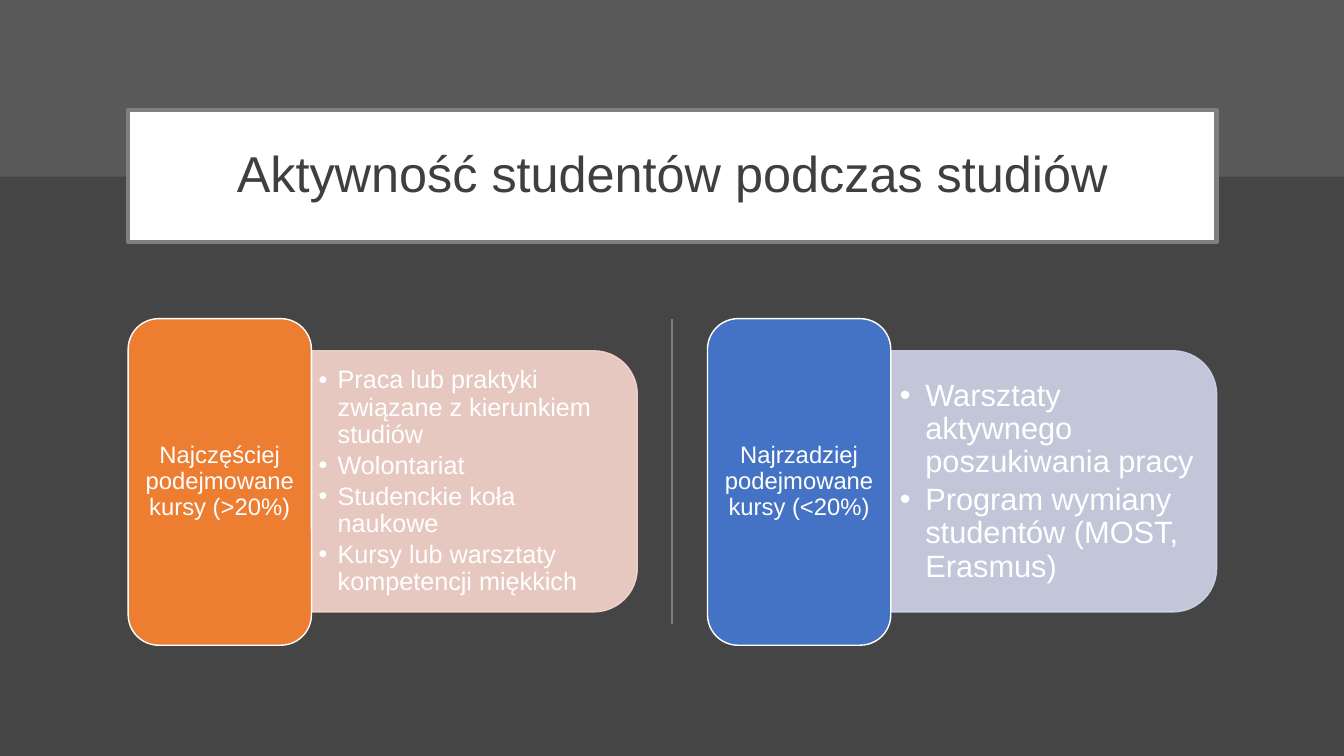
"""Build a slide comparing the most and least common student activities."""
import pptx
import pptx.dml.color
import pptx.enum.shapes
import pptx.enum.text
import pptx.oxml
import pptx.oxml.ns
import pptx.util
from pptx.util import Cm, Pt

RGBColor = pptx.dml.color.RGBColor
MSO_SHAPE = pptx.enum.shapes.MSO_SHAPE
PP_ALIGN = pptx.enum.text.PP_ALIGN

BACKGROUND = RGBColor(0x45, 0x45, 0x45)
BAND = RGBColor(0x59, 0x59, 0x59)
GRAY = RGBColor(0x7F, 0x7F, 0x7F)
TITLE_TEXT = RGBColor(0x3F, 0x3F, 0x3F)
WHITE = RGBColor(0xFF, 0xFF, 0xFF)
ORANGE = RGBColor(0xED, 0x7D, 0x31)
BLUE = RGBColor(0x44, 0x72, 0xC4)
PALE_ORANGE = RGBColor(0xF8, 0xD7, 0xCE)
PALE_BLUE = RGBColor(0xCF, 0xD5, 0xEA)

GROUP_TOP = Cm(8.03)
LABEL_WIDTH = Cm(4.62)
COLUMNS = [
    (Cm(3.23), ORANGE, PALE_ORANGE, "Najczęściej podejmowane kursy (>20%)", 18, Cm(0.48), Cm(0.18),
     ["Praca lub praktyki związane z kierunkiem studiów", "Wolontariat",
      "Studenckie koła naukowe", "Kursy lub warsztaty kompetencji miękkich"]),
    (Cm(17.83), BLUE, PALE_BLUE, "Najrzadziej podejmowane kursy (<20%)", 22, Cm(0.64), Cm(0.23),
     ["Warsztaty aktywnego poszukiwania pracy",
      "Program wymiany studentów (MOST, Erasmus)"]),
]


def style_shape(shape, fill, line=None, width=1):
    shape.shadow.inherit = False
    shape.fill.solid()
    shape.fill.fore_color.rgb = fill
    if line is None:
        shape.line.fill.background()
    else:
        shape.line.color.rgb = line
        shape.line.width = Pt(width)


def style_text(shape, text, size, color, alignment, inset, space_after=0):
    frame = shape.text_frame
    frame.text = text
    frame.word_wrap = True
    frame.auto_size = pptx.enum.text.MSO_AUTO_SIZE.NONE
    frame.vertical_anchor = pptx.enum.text.MSO_ANCHOR.MIDDLE
    frame.margin_left = frame.margin_right = inset
    frame.margin_top = frame.margin_bottom = Cm(0.12)
    for paragraph in frame.paragraphs:
        paragraph.alignment = alignment
        paragraph.line_spacing = 0.9
        paragraph.space_before = Pt(0)
        paragraph.space_after = Pt(space_after)
        for run in paragraph.runs:
            run.font.name = "Arial"
            run.font.size = Pt(size)
            run.font.color.rgb = color


presentation = pptx.Presentation()
presentation.slide_width = Cm(33.87)
presentation.slide_height = Cm(19.05)
slide = presentation.slides.add_slide(presentation.slide_layouts.get_by_name("Two Content"))
slide.background.fill.solid()
slide.background.fill.fore_color.rgb = BACKGROUND
shapes = slide.shapes
title = shapes.title
lists = [slide.placeholders[1], slide.placeholders[2]]

band = shapes.add_shape(MSO_SHAPE.RECTANGLE, 0, 0, presentation.slide_width, Cm(4.45))
style_shape(band, BAND)
shapes._spTree.insert(2, band._element)

title.left, title.top, title.width, title.height = Cm(3.23), Cm(2.77), Cm(27.43), Cm(3.33)
title.fill.solid()
title.fill.fore_color.rgb = WHITE
title.line.color.rgb = GRAY
title.line.width = Pt(3)
style_text(title, "Aktywność studentów podczas studiów", 36, TITLE_TEXT, PP_ALIGN.CENTER, Cm(0.25))

for activity_list, column in zip(lists, COLUMNS):
    left, color, pale_color, label_text, size, indent, inset, activities = column

    panel = shapes.add_shape(MSO_SHAPE.ROUND_2_SAME_RECTANGLE,
                             left + Cm(5.44), GROUP_TOP, Cm(6.58), Cm(8.2))
    panel.rotation = 90
    style_shape(panel, pale_color, pale_color)
    for color_element in panel._element.spPr.iter(pptx.oxml.ns.qn("a:srgbClr")):
        alpha = pptx.oxml.parse_xml(f'<a:alpha {pptx.oxml.ns.nsdecls("a")} val="90000"/>')
        color_element.append(alpha)
    shapes._spTree.insert(3, panel._element)

    activity_list.left, activity_list.top = left + LABEL_WIDTH, Cm(9.17)
    activity_list.width, activity_list.height = Cm(7.87), Cm(5.94)
    style_text(activity_list, "\n".join(activities), size, WHITE, PP_ALIGN.LEFT, inset, round(size * 0.15, 1))
    for paragraph in activity_list.text_frame.paragraphs:
        properties = paragraph._p.get_or_add_pPr()
        properties.set("marL", str(indent))
        properties.set("indent", str(-indent))
        properties.append(pptx.oxml.parse_xml(f'<a:buChar {pptx.oxml.ns.nsdecls("a")} char="•"/>'))

    label = shapes.add_shape(MSO_SHAPE.ROUNDED_RECTANGLE, left, GROUP_TOP, LABEL_WIDTH, Cm(8.23))
    style_shape(label, color, WHITE)
    style_text(label, label_text, 17, WHITE, PP_ALIGN.CENTER, Cm(0.18))

divider = shapes.add_connector(pptx.enum.shapes.MSO_CONNECTOR.STRAIGHT,
                               Cm(16.93), GROUP_TOP, Cm(16.93), Cm(15.72))
divider.line.color.rgb = GRAY
divider.line.width = Pt(1.5)
divider._element.spPr.append(pptx.oxml.parse_xml(f'<a:effectLst {pptx.oxml.ns.nsdecls("a")}/>'))

presentation.save("out.pptx")
